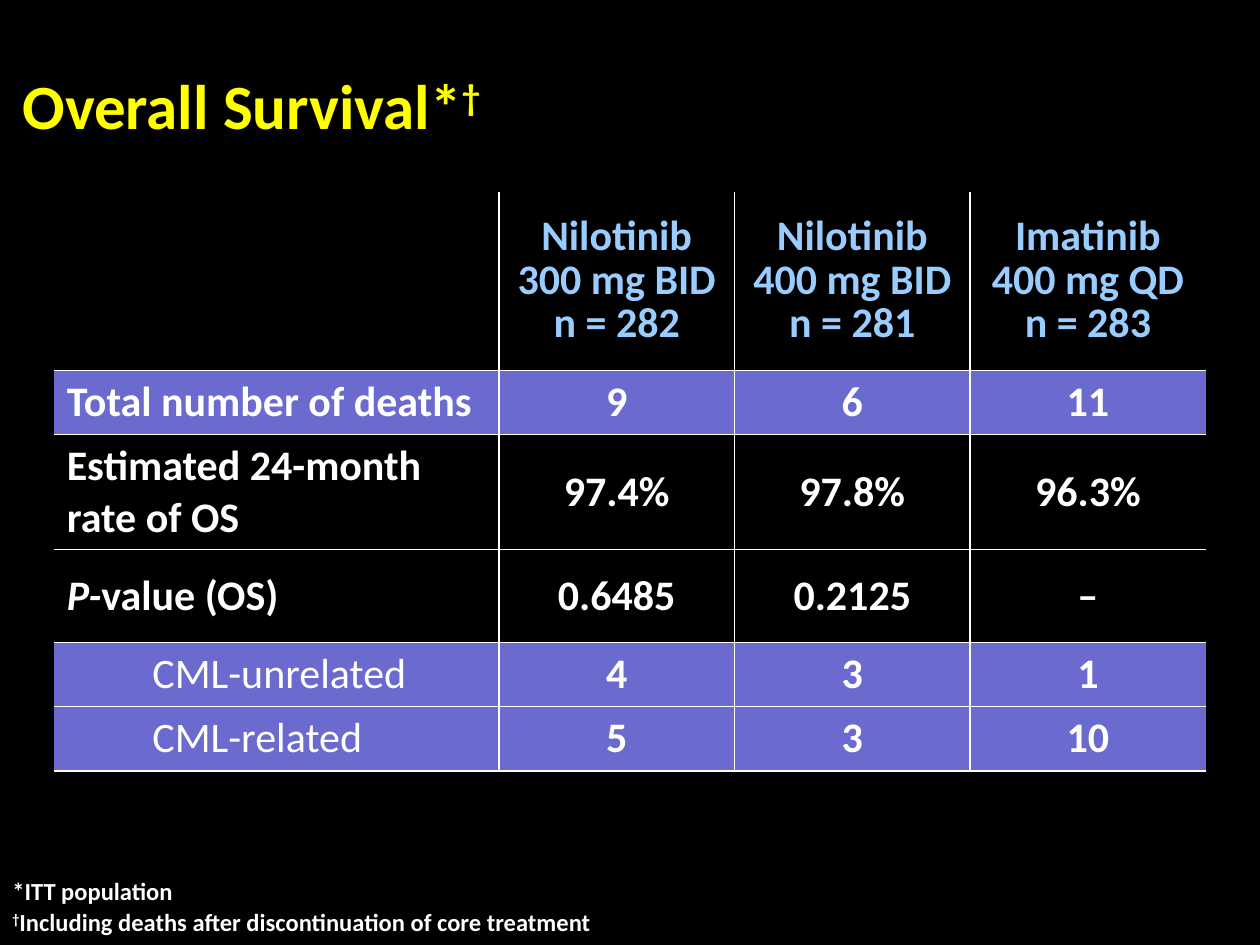
from dataclasses import dataclass

from lxml import etree
from pptx import Presentation
from pptx.dml.color import RGBColor
from pptx.enum.text import MSO_ANCHOR, PP_ALIGN
from pptx.oxml.ns import qn
from pptx.util import Inches, Pt

LEFT, CENTER = PP_ALIGN.LEFT, PP_ALIGN.CENTER
TOP, MIDDLE = MSO_ANCHOR.TOP, MSO_ANCHOR.MIDDLE

FONT = "Calibri"
COLORS = {
    "background": "000000",
    "title": "FFFF00",
    "heading": "99CCFF",
    "text": "FFFFFF",
    "band": "6B6BCF",
    "rule": "FFFFFF",
}


@dataclass(frozen=True)
class Span:
    text: str
    bold: bool = True
    italic: bool = False
    raised: bool = False


@dataclass(frozen=True)
class Style:
    size: float
    color: str
    align: PP_ALIGN = LEFT
    line_spacing: float = 1.0
    before: float = 0
    indent: float = 0


@dataclass(frozen=True)
class Row:
    label: list[list[Span]]
    values: tuple[str, str, str]
    height: float
    banded: bool = False
    indent: float = 0
    anchor: MSO_ANCHOR = MIDDLE


TITLE = Style(36, "title", line_spacing=0.9)
HEADING = Style(24, "heading", CENTER, line_spacing=0.85)
VALUE = Style(24, "text", CENTER)
FOOTNOTE = Style(14, "text", before=1.4)

COLUMN_WIDTHS = (3.53, 1.87, 1.87, 1.87)
HEADER_HEIGHT = 1.42
HEADINGS = (
    ("Nilotinib", "300 mg BID", "n = 282"),
    ("Nilotinib", "400 mg BID", "n = 281"),
    ("Imatinib", "400 mg QD", "n = 283"),
)
ROWS = (
    Row([[Span("Total number of deaths")]], ("9", "6", "11"), 0.51, True, anchor=TOP),
    Row([[Span("Estimated 24-month")], [Span("rate of OS")]],
        ("97.4%", "97.8%", "96.3%"), 0.91),
    Row([[Span("P-", italic=True), Span("value (OS)")]],
        ("0.6485", "0.2125", "–"), 0.74),
    Row([[Span("CML-unrelated", bold=False)]], ("4", "3", "1"), 0.51, True, 0.68),
    Row([[Span("CML-related", bold=False)]], ("5", "3", "10"), 0.51, True, 0.68, TOP),
)


def color(name: str) -> RGBColor:
    return RGBColor.from_string(COLORS[name])


def add_span(para, span: Span, style: Style) -> None:
    for index, line in enumerate(span.text.split("\n")):
        if index:
            para.add_line_break()
        run = para.add_run()
        run.text = line
        run.font.name = FONT
        run.font.size = Pt(style.size)
        run.font.bold = span.bold
        run.font.italic = span.italic
        run.font.color.rgb = color(style.color)
        if span.raised:
            run.font._element.set("baseline", "30000")


def write(frame, paragraphs: list[list[Span]], style: Style) -> None:
    for index, spans in enumerate(paragraphs):
        para = frame.paragraphs[0] if index == 0 else frame.add_paragraph()
        para.alignment = style.align
        para.line_spacing = style.line_spacing
        para.space_before = Pt(style.before)
        if style.indent:
            para._p.get_or_add_pPr().set("marL", str(Inches(style.indent)))
        for span in spans:
            add_span(para, span, style)


def add_text(page, left: float, top: float, width: float, height: float,
             paragraphs: list[list[Span]], style: Style,
             anchor: MSO_ANCHOR = TOP) -> None:
    box = page.shapes.add_textbox(
        Inches(left), Inches(top), Inches(width), Inches(height))
    frame = box.text_frame
    frame.word_wrap = True
    frame.vertical_anchor = anchor
    write(frame, paragraphs, style)


def set_borders(cell, visible: dict[str, bool]) -> None:
    properties = cell._tc.get_or_add_tcPr()
    for side, shown in visible.items():
        line = etree.SubElement(properties, qn(f"a:ln{side}"), w=str(Pt(1)))
        if shown:
            fill = etree.SubElement(line, qn("a:solidFill"))
            etree.SubElement(fill, qn("a:srgbClr"), val=COLORS["rule"])
        else:
            etree.SubElement(line, qn("a:noFill"))


def add_survival_table(page) -> None:
    heights = (HEADER_HEIGHT, *(row.height for row in ROWS))
    table = page.shapes.add_table(
        len(heights), len(COLUMN_WIDTHS), Inches(0.43), Inches(1.52),
        Inches(sum(COLUMN_WIDTHS)), Inches(sum(heights))).table
    table.first_row = False
    table.horz_banding = False
    for column, width in zip(table.columns, COLUMN_WIDTHS):
        column.width = Inches(width)

    last_column = len(COLUMN_WIDTHS) - 1
    for row_index, height in enumerate(heights):
        table.rows[row_index].height = Inches(height)
        for column_index in range(len(COLUMN_WIDTHS)):
            cell = table.cell(row_index, column_index)
            set_borders(cell, {
                "L": column_index > 0,
                "R": column_index < last_column,
                "T": row_index > 0,
                "B": True,
            })
            if row_index and ROWS[row_index - 1].banded:
                cell.fill.solid()
                cell.fill.fore_color.rgb = color("band")
            else:
                cell.fill.background()
            cell.vertical_anchor = ROWS[row_index - 1].anchor if row_index else MIDDLE

    for column_index, (drug, dose, count) in enumerate(HEADINGS, 1):
        write(table.cell(0, column_index).text_frame,
              [[Span(f"{drug}\n{dose}")], [Span(count)]], HEADING)
    for row_index, row in enumerate(ROWS, 1):
        write(table.cell(row_index, 0).text_frame, row.label,
              Style(24, "text", indent=row.indent))
        for column_index, value in enumerate(row.values, 1):
            write(table.cell(row_index, column_index).text_frame,
                  [[Span(value)]], VALUE)


def main() -> None:
    deck = Presentation()
    deck.slide_width = Inches(10)
    deck.slide_height = Inches(7.5)
    page = deck.slides.add_slide(deck.slide_layouts[6])
    page.background.fill.solid()
    page.background.fill.fore_color.rgb = color("background")

    add_text(page, 0.08, 0.24, 9.83, 1.25,
             [[Span("Overall Survival*"), Span("†", raised=True)]], TITLE, MIDDLE)
    add_survival_table(page)
    add_text(page, 0, 6.9, 7.24, 0.6, [
        [Span("*ITT population")],
        [Span("†", raised=True),
         Span("Including deaths after discontinuation of core treatment")],
    ], FOOTNOTE)
    deck.save("out.pptx")


if __name__ == "__main__":
    main()
